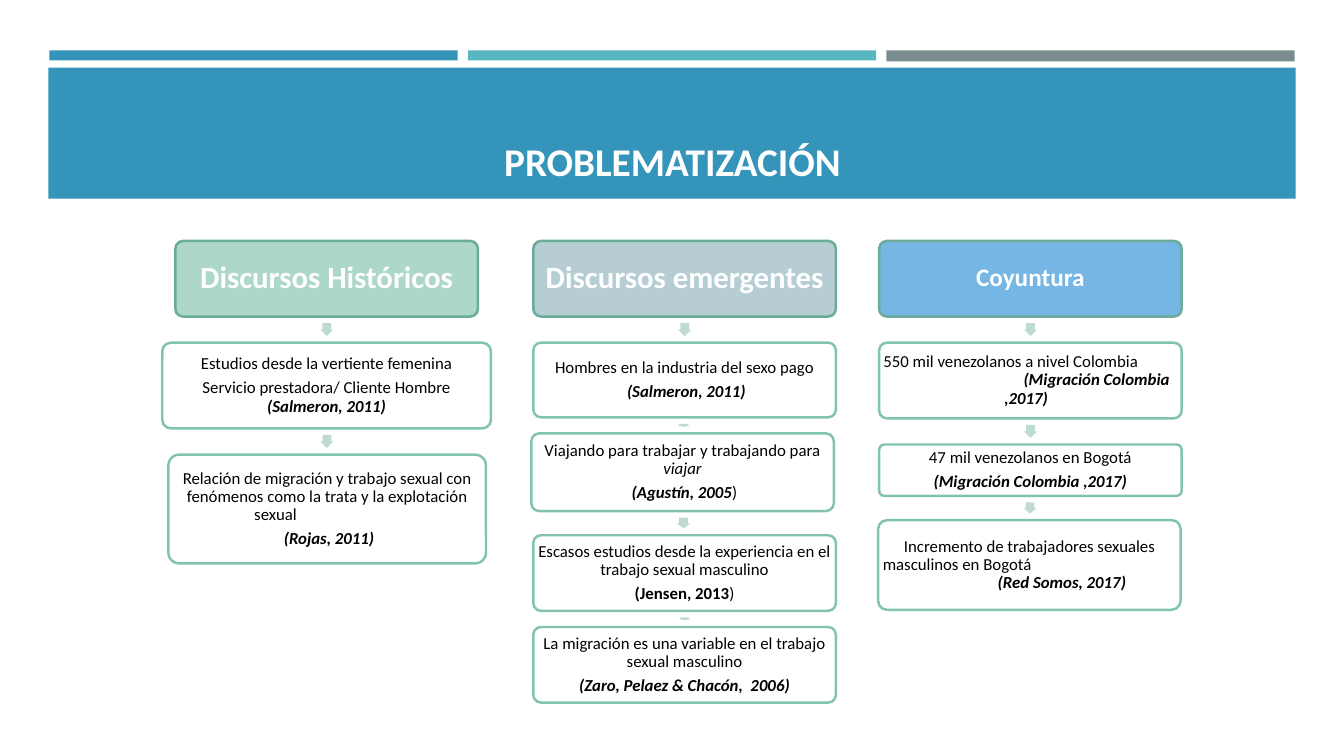
from math import atan2, degrees

from pptx import Presentation
from pptx.dml.color import RGBColor
from pptx.enum.shapes import MSO_SHAPE as Preset
from pptx.enum.text import MSO_ANCHOR as Anchor, PP_ALIGN as Align
from pptx.oxml import parse_xml
from pptx.oxml.ns import nsdecls, qn
from pptx.util import Inches, Pt

FONT = "Calibri"
TITLE = "PROBLEMATIZACIÓN"

# left, top, width, height, fill
BANDS = [
    (0.49, 0.5, 4.05, 0.1, "3494BA"),
    (4.64, 0.5, 4.05, 0.1, "58B6C0"),
    (8.79, 0.5, 4.05, 0.11, "7A8C8E"),
    (0.48, 0.67, 12.37, 1.3, "3494BA"),
]

# A paragraph is (runs, indents): a run is (text, style) with b = bold, i = italic;
# indents are None when centred, or (left margin, first line indent) in inches.
# Each box is (left, top, width, height, paragraphs).
COLUMNS = [
    {"heading": "Discursos Históricos", "size": 22, "fill": "ACD7CA", "left": 1.74, "boxes": [
        (1.61, 3.4, 3.26, 0.85, [
            ([("Estudios desde la vertiente femenina", "")], None),
            ([("Servicio prestadora/ Cliente Hombre ", ""), ("(Salmeron, 2011)", "bi")], None)]),
        (1.67, 4.51, 3.15, 1.08, [
            ([("Relación de migración y trabajo sexual con fenómenos "
               "como la trata y la explotación", "")], None),
            ([("sexual", "")], (0.8, 0)),
            ([(" ", ""), ("(Rojas, 2011)", "bi")], None)]),
    ]},
    {"heading": "Discursos emergentes", "size": 22, "fill": "B5CDD3", "left": 5.29, "boxes": [
        (5.29, 3.4, 3, 0.74, [
            ([("Hombres en la industria del sexo pago", "")], None),
            ([(" ", ""), ("(Salmeron, 2011)", "bi")], None)]),
        (5.27, 4.3, 3, 0.77, [
            ([("Viajando para trabajar y trabajando para ", ""), ("viajar", "i")], None),
            ([(" (Agustín, 2005", "bi"), (")", "")], None)]),
        (5.29, 5.31, 3, 0.75, [
            ([("Escasos estudios desde la experiencia en el trabajo sexual masculino", "")], None),
            ([("(Jensen, 2013", "b"), (")", "")], None)]),
        (5.29, 6.22, 3, 0.75, [
            ([("La migración es una variable en el trabajo sexual masculino", "")], None),
            ([("(Zaro, Pelaez & Chacón,  2006)", "bi")], None)]),
    ]},
    {"heading": "Coyuntura", "size": 18, "fill": "75B6E5", "left": 8.72, "boxes": [
        (8.72, 3.4, 3, 0.75, [
            ([("550 mil venezolanos a nivel Colombia", "")], (0, 0)),
            ([("(Migración Colombia ,2017)", "bi")], (1.2, 0.19))]),
        (8.72, 4.41, 3, 0.51, [
            ([("47 mil venezolanos en Bogotá", "")], None),
            ([("(Migración Colombia ,2017)", "bi")], None)]),
        (8.71, 5.16, 3, 0.89, [
            ([("Incremento de trabajadores sexuales masculinos en Bogotá", "")], (0, 0.21)),
            ([("(Red Somos, 2017)", "bi")], (1.14, 0))]),
    ]},
]

HEADING_TOP, HEADING_WIDTH, HEADING_HEIGHT = 2.39, 3, 0.75
ARROW_WIDTH = 0.13
ARROW_CLEARANCE = 0.13


def color(value):
    return RGBColor.from_string(value)


def add_block(preset, place, fill, line=None):
    shape = slide.shapes.add_shape(preset, *(Inches(length) for length in place))
    shape.shadow.inherit = False
    shape.fill.solid()
    shape.fill.fore_color.rgb = color(fill)
    if line:
        shape.line.color.rgb = color(line)
        shape.line.width = Pt(1.75)
    else:
        shape.line.fill.background()
    return shape


def add_card(place, fill, line, inset):
    card = add_block(Preset.ROUNDED_RECTANGLE, place, fill, line)
    card.adjustments[0] = 0.1
    frame = card.text_frame
    frame.word_wrap = True
    frame.vertical_anchor = Anchor.MIDDLE
    frame.margin_left = frame.margin_right = Inches(inset)
    frame.margin_top = frame.margin_bottom = Inches(inset)
    return card


def set_font(paragraph, size, value, bold=None):
    font = paragraph.font
    font.name, font.size, font.bold = FONT, Pt(size), bold
    font.color.rgb = color(value)


def make_translucent(fill_format_parent, percent):
    for color_element in fill_format_parent.iter(qn("a:srgbClr")):
        color_element.append(parse_xml(f'<a:alpha {nsdecls("a")} val="{percent * 1000}"/>'))


def write_paragraphs(frame, paragraphs):
    for index, (runs, indents) in enumerate(paragraphs):
        paragraph = frame.paragraphs[0] if index == 0 else frame.add_paragraph()
        paragraph.line_spacing = 0.9
        # An indented line continues the sentence above it, so no gap between them.
        continues = index + 1 < len(paragraphs) and paragraphs[index + 1][1] is not None
        paragraph.space_after = Pt(0 if continues else 4.2)
        set_font(paragraph, 12, "000000")
        if indents is None:
            paragraph.alignment = Align.CENTER
        else:
            paragraph.alignment = Align.LEFT
            properties = paragraph._p.get_or_add_pPr()
            properties.set("marL", str(Inches(indents[0])))
            properties.set("indent", str(Inches(indents[1])))
        for text, style in runs:
            run = paragraph.add_run()
            run.text = text
            run.font.bold = "b" in style
            run.font.italic = "i" in style


def add_arrow(upper, lower):
    """Arrow in the gap between two boxes, aimed from centre to centre."""
    (x1, y1, w1, h1), (x2, y2, w2, h2) = upper, lower
    start, end = (x1 + w1 / 2, y1 + h1 / 2), (x2 + w2 / 2, y2 + h2 / 2)
    length = y2 - y1 - h1 - ARROW_CLEARANCE
    middle_x, middle_y = (start[0] + end[0]) / 2, (y1 + h1 + y2) / 2
    place = (middle_x - length / 2, middle_y - ARROW_WIDTH / 2, length, ARROW_WIDTH)
    arrow = add_block(Preset.RIGHT_ARROW, place, "BDDBD0")
    arrow.adjustments[0], arrow.adjustments[1] = 0.667, 0.5
    arrow.rotation = degrees(atan2(end[1] - start[1], end[0] - start[0]))


presentation = Presentation()
presentation.slide_width, presentation.slide_height = Inches(13.33), Inches(7.5)
slide = presentation.slides.add_slide(presentation.slide_layouts[6])

for *band_place, band_fill in BANDS:
    add_block(Preset.RECTANGLE, band_place, band_fill)

title = slide.shapes.add_textbox(Inches(0.64), Inches(0.77), Inches(12.06), Inches(1.11))
title.text_frame.word_wrap = True
title.text_frame.vertical_anchor = Anchor.BOTTOM
title_paragraph = title.text_frame.paragraphs[0]
title_paragraph.text = TITLE
title_paragraph.alignment = Align.CENTER
set_font(title_paragraph, 28, "FFFFFF", bold=True)

for column in COLUMNS:
    previous = (column["left"], HEADING_TOP, HEADING_WIDTH, HEADING_HEIGHT)
    heading = add_card(previous, column["fill"], "6AAC98", 0.03)
    heading_paragraph = heading.text_frame.paragraphs[0]
    heading_paragraph.text = column["heading"]
    heading_paragraph.alignment = Align.CENTER
    heading_paragraph.line_spacing = 0.9
    set_font(heading_paragraph, column["size"], "FFFFFF", bold=True)
    for *box_place, box_paragraphs in column["boxes"]:
        add_arrow(previous, box_place)
        box = add_card(box_place, "FFFFFF", "75BDA7", 0.02)
        make_translucent(box._element.spPr, 90)
        write_paragraphs(box.text_frame, box_paragraphs)
        previous = box_place

presentation.save("out.pptx")
